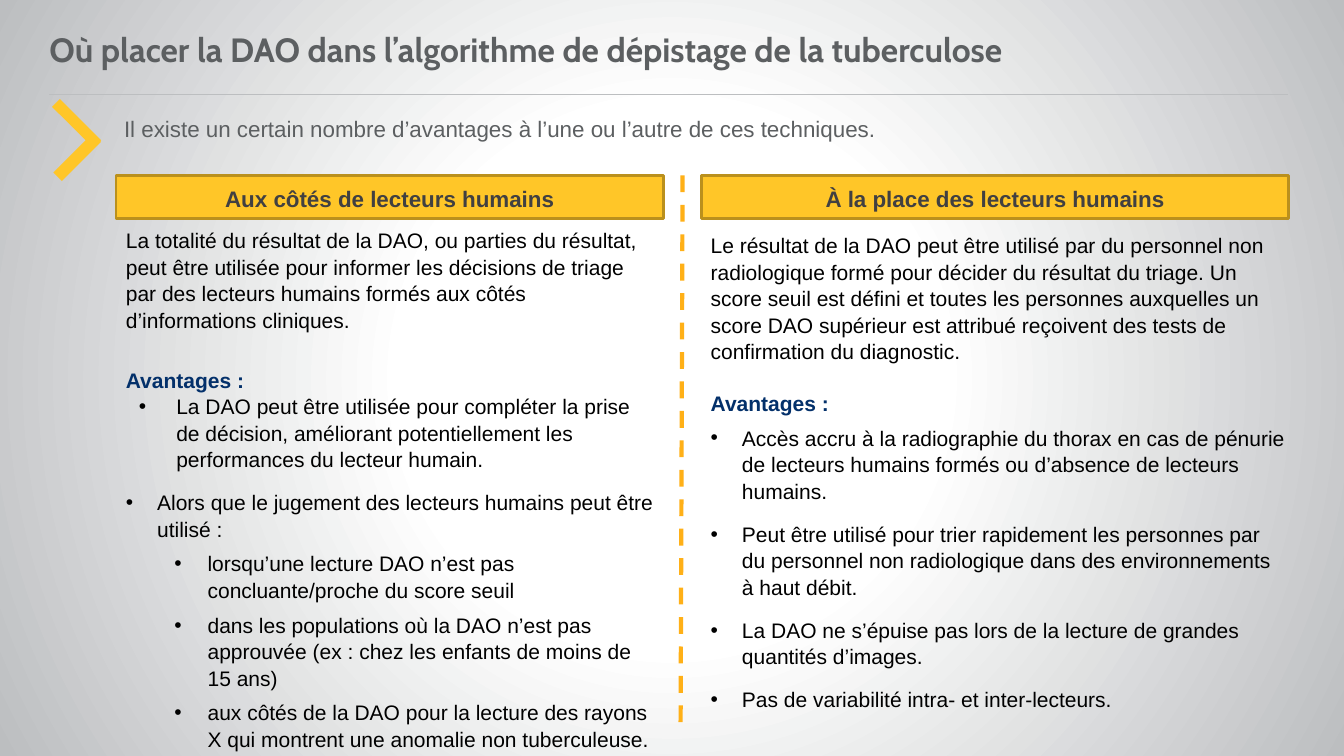
from pptx import Presentation
from pptx.dml.color import RGBColor
from pptx.enum.dml import MSO_LINE
from pptx.enum.shapes import MSO_CONNECTOR, MSO_SHAPE
from pptx.enum.text import MSO_ANCHOR, PP_ALIGN
from pptx.oxml import parse_xml
from pptx.oxml.ns import nsdecls, qn
from pptx.util import Inches, Pt
from dataclasses import dataclass
from lxml.etree import SubElement


@dataclass
class Theme:
    font: str = "Arial"
    title_font: str = "Cabin"
    title: float = 24
    lead: float = 16
    body: float = 15
    grey: str = "5C5F61"
    rule: str = "BCBEC0"
    yellow: str = "FFC628"
    edge: str = "BA901D"
    dash: str = "FFB017"
    dark: str = "414041"
    navy: str = "03306A"
    black: str = "000000"


th = Theme()
prs = Presentation()
prs.slide_width, prs.slide_height = Inches(13.33), Inches(7.5)
W, H = prs.slide_width / 100, prs.slide_height / 100
s = prs.slides.add_slide(prs.slide_layouts[5])


def box(x, y, w, h):
    return int(x * W), int(y * H), int(w * W), int(h * H)


def write(p, text, size, color, bold=False, font=th.font, spacing=1.1):
    p.line_spacing = spacing
    r = p.add_run()
    r.text = text
    r.font.name, r.font.size, r.font.bold = font, Pt(size), bold
    r.font.color.rgb = RGBColor.from_string(color)


s.element.cSld.insert(0, parse_xml(
    f'<p:bg {nsdecls("p", "a")}><p:bgPr><a:gradFill rotWithShape="1"><a:gsLst>'
    '<a:gs pos="0"><a:srgbClr val="FFFFFF"/></a:gs>'
    '<a:gs pos="35000"><a:srgbClr val="FFFFFF"/></a:gs>'
    f'<a:gs pos="100000"><a:srgbClr val="{th.rule}"/></a:gs></a:gsLst>'
    '<a:path path="circle"><a:fillToRect l="50000" t="50000" r="50000" b="50000"/></a:path>'
    '</a:gradFill><a:effectLst/></p:bgPr></p:bg>'))

lines = [
    (3.68, 12.53, 95.8, 12.53, th.rule, 0.75, MSO_LINE.SOLID),
    (50.79, 23.2, 50.64, 96.4, th.dash, 3, MSO_LINE.DASH),
]
for x1, y1, x2, y2, color, width, dash in lines:
    c = s.shapes.add_connector(MSO_CONNECTOR.STRAIGHT, *box(x1, y1, x2, y2))
    c.line.color.rgb = RGBColor.from_string(color)
    c.line.width, c.line.dash_style = Pt(width), dash
    SubElement(c.element.spPr, qn("a:effectLst"))

for place, angle in [((3.68, 20, 4.13, 1.6), 135), ((3.53, 15.6, 4.35, 1.47), 225)]:
    sp = s.shapes.add_shape(MSO_SHAPE.RECTANGLE, *box(*place))
    sp.rotation = angle
    sp.shadow.inherit = False
    sp.fill.solid()
    sp.fill.fore_color.rgb = RGBColor.from_string(th.yellow)
    sp.line.fill.background()

title = s.shapes.title
title.left, title.top, title.width, title.height = box(3.68, 1.33, 89.12, 11.07)
tf = title.text_frame
tf.margin_left = tf.margin_right = 0
tf.vertical_anchor = MSO_ANCHOR.MIDDLE
tf.paragraphs[0].alignment = PP_ALIGN.LEFT
write(tf.paragraphs[0], "Où placer la DAO dans l’algorithme de dépistage de la tuberculose",
      th.title, th.grey, True, th.title_font, 0.9)

tf = s.shapes.add_textbox(*box(9.23, 14.27, 87.25, 7.2)).text_frame
tf.word_wrap = True
tf.margin_left = tf.margin_right = 0
write(tf.paragraphs[0], "Il existe un certain nombre d’avantages à l’une ou l’autre de ces techniques.",
      th.lead, th.grey)

kinds = {
    "wide": (3.75, 2.78, 0),
    "item": (2.33, 2.33, 0),
    "sub": (6.08, 2.48, 1),
}
columns = [
    ("Aux côtés de lecteurs humains", 8.63, 40.74, (8.63, 29.33, 40.74, 69.73), 0.05, [
        ("text", 0, "La totalité du résultat de la DAO, ou parties du résultat, peut être utilisée pour informer les décisions de triage par des lecteurs humains formés aux côtés d’informations cliniques."),
        ("head", 24, "Avantages :"),
        ("wide", 0, "La DAO peut être utilisée pour compléter la prise de décision, améliorant potentiellement les performances du lecteur humain."),
        ("item", 12, "Alors que le jugement des lecteurs humains peut être utilisé :"),
        ("sub", 6, "lorsqu’une lecture DAO n’est pas concluante/proche du score seuil"),
        ("sub", 6, "dans les populations où la DAO n’est pas approuvée (ex : chez les enfants de moins de 15 ans)"),
        ("sub", 6, "aux côtés de la DAO pour la lecture des rayons X qui montrent une anomalie non tuberculeuse."),
    ]),
    ("À la place des lecteurs humains", 52.21, 43.66, (52.14, 29.33, 44.41, 67.6), 0.1, [
        ("text", 0, "Le résultat de la DAO peut être utilisé par du personnel non radiologique formé pour décider du résultat du triage. Un score seuil est défini et toutes les personnes auxquelles un score DAO supérieur est attribué reçoivent des tests de confirmation du diagnostic."),
        ("head", 18, "Avantages :"),
        ("item", 6, "Accès accru à la radiographie du thorax en cas de pénurie de lecteurs humains formés ou d’absence de lecteurs humains."),
        ("item", 12, "Peut être utilisé pour trier rapidement les personnes par du personnel non radiologique dans des environnements à haut débit."),
        ("item", 12, "La DAO ne s’épuise pas lors de la lecture de grandes quantités d’images."),
        ("item", 12, "Pas de variabilité intra- et inter-lecteurs."),
    ]),
]
for heading, x, width, place, inset, paragraphs in columns:
    sp = s.shapes.add_shape(MSO_SHAPE.RECTANGLE, *box(x, 23.2, width, 5.73))
    sp.shadow.inherit = False
    sp.fill.solid()
    sp.fill.fore_color.rgb = RGBColor.from_string(th.yellow)
    sp.line.color.rgb = RGBColor.from_string(th.edge)
    sp.line.width = Pt(2)
    tf = sp.text_frame
    tf.margin_left = tf.margin_right = 0
    tf.vertical_anchor = MSO_ANCHOR.MIDDLE
    tf.paragraphs[0].alignment = PP_ALIGN.CENTER
    write(tf.paragraphs[0], heading, th.lead, th.dark, True)

    tf = s.shapes.add_textbox(*box(*place)).text_frame
    tf.word_wrap = True
    tf.margin_top = tf.margin_bottom = Inches(inset)
    for i, (kind, before, text) in enumerate(paragraphs):
        p = tf.add_paragraph() if i else tf.paragraphs[0]
        if kind in kinds:
            left, hang, p.level = kinds[kind]
            pPr = p._p.get_or_add_pPr()
            pPr.set("marL", str(int(left * W)))
            pPr.set("indent", str(int(-hang * W)))
            SubElement(pPr, qn("a:buFont"), typeface=th.font)
            SubElement(pPr, qn("a:buChar"), char="•")
        p.space_before = Pt(before)
        write(p, text, th.body, th.navy if kind == "head" else th.black, kind == "head", spacing=1.05)

prs.save("out.pptx")
